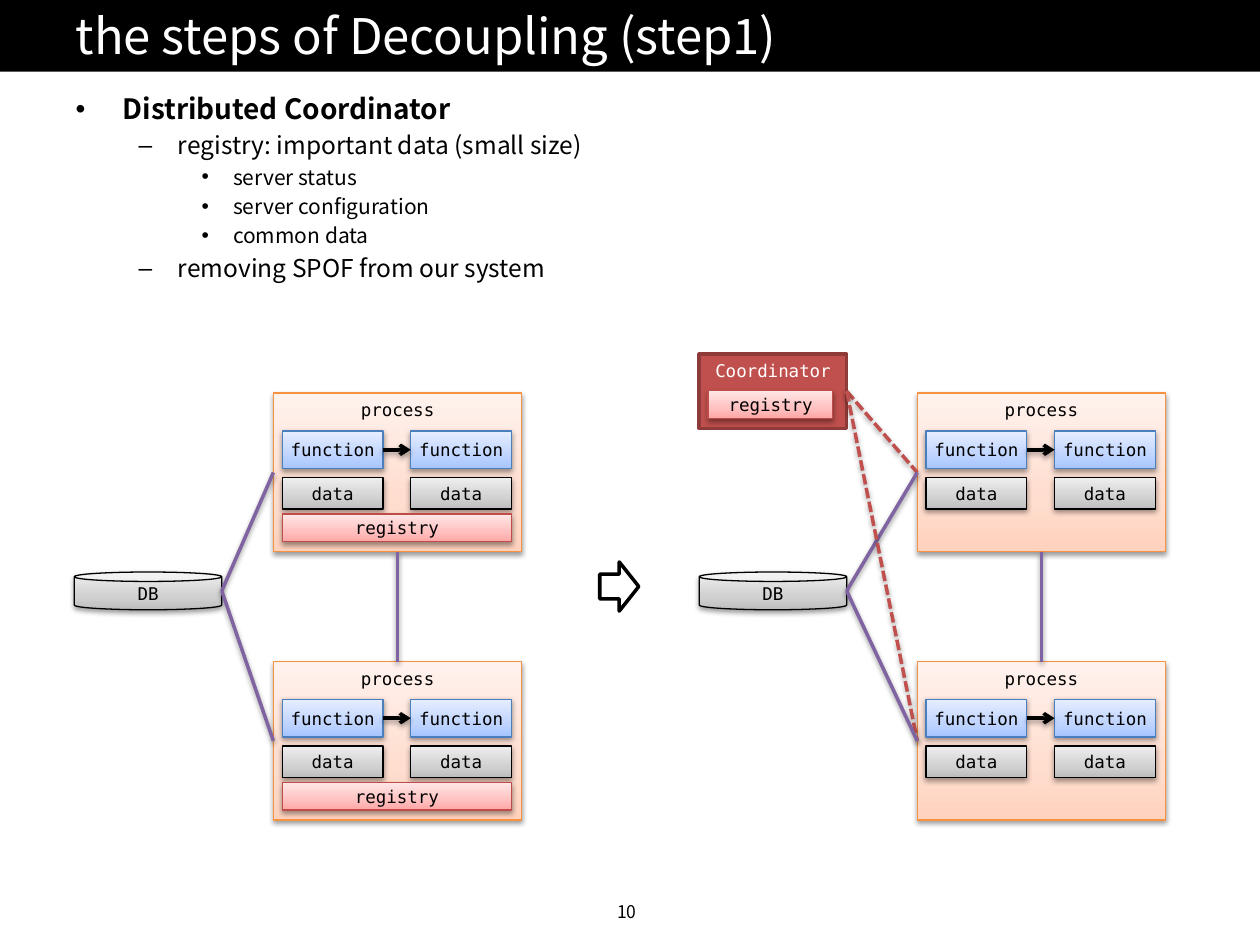
import copy

import lxml.etree
import pptx
import pptx.dml.color
import pptx.enum.dml
import pptx.enum.shapes
import pptx.enum.text
import pptx.oxml.ns
import pptx.util

inch = pptx.util.Inches
point = pptx.util.Pt
qname = pptx.oxml.ns.qn
hex_color = pptx.dml.color.RGBColor.from_string
preset = pptx.enum.shapes.MSO_SHAPE
anchor = pptx.enum.text.MSO_ANCHOR
align = pptx.enum.text.PP_ALIGN
SANS = "Noto Sans CJK KR"
MONO = "DejaVu Sans Mono"
STYLES = {
    "process": (["FFD2BD", "FFDED0", "FFF2ED"], "F69240", 0.75, "000000"),
    "function": (["A4C4FF", "BFD4FF", "E6EEFF"], "4B7EBC", 0.75, "000000"),
    "data": (["BDBDBD", "D1D1D1", "EEEEEE"], "000000", 0.75, "000000"),
    "registry": (["FFA6A5", "FFC0BF", "FFE7E7"], "BF4C48", 0.75, "000000"),
    "coordinator": (["C0504D"], "8E3B39", 2, "FFFFFF"),
    "step": (["FFFFFF"], "000000", 2, "000000"),
}
SHADOW = lxml.etree.fromstring(
    '<a:outerShdw xmlns:a="http://schemas.openxmlformats.org/drawingml/2006/main" '
    'blurRad="39370" dist="20320" dir="5400000" rotWithShape="0">'
    '<a:srgbClr val="000000"><a:alpha val="38000"/></a:srgbClr></a:outerShdw>'
)

deck = pptx.Presentation()
deck.slide_width, deck.slide_height = inch(10), inch(7.5)
page = deck.slides.add_slide(deck.slide_layouts[1])


def draw_box(style, label, left, top, width, height, outline=preset.RECTANGLE):
    fills, line_color, line_width, text_color = STYLES[style]
    box = page.shapes.add_shape(outline, inch(left), inch(top), inch(width), inch(height))
    box.line.color.rgb = hex_color(line_color)
    box.line.width = point(line_width)
    box.shadow.inherit = False
    if len(fills) == 1:
        box.fill.solid()
        box.fill.fore_color.rgb = hex_color(fills[0])
    else:
        box.fill.gradient()
        box.fill.gradient_angle = 90
        stops = box._element.spPr.find(".//" + qname("a:gsLst"))
        stops.append(copy.deepcopy(stops[0]))
        for stop, position, color in zip(box.fill.gradient_stops, (0, 0.35, 1), fills):
            stop.position = position
            stop.color.rgb = hex_color(color)
        box._element.spPr.find(qname("a:effectLst")).append(copy.deepcopy(SHADOW))
    if label:
        at_top = style in ("process", "coordinator")
        box.text_frame.word_wrap = False
        box.text_frame.vertical_anchor = anchor.TOP if at_top else anchor.MIDDLE
        para = box.text_frame.paragraphs[0]
        para.alignment = align.CENTER
        span = para.add_run()
        span.text = label
        for name, value in {"size": point(10), "name": MONO}.items():
            setattr(span.font, name, value)
        span.font.color.rgb = hex_color(text_color)
    return box


def draw_link(start, start_side, end, end_side, color, dashed=False, arrow=False):
    right, middle = start.left + start.width, start.top + start.height // 2
    link = page.shapes.add_connector(
        pptx.enum.shapes.MSO_CONNECTOR.STRAIGHT, right, middle, end.left, end.top
    )
    if start.auto_shape_type == preset.RECTANGLE:
        link.begin_connect(start, start_side)
    link.end_connect(end, end_side)
    link.line.color.rgb = hex_color(color)
    link.line.width = point(2)
    if dashed:
        link.line.dash_style = pptx.enum.dml.MSO_LINE.SQUARE_DOT
        link.line._ln.find(qname("a:prstDash")).set("val", "sysDash")
    if arrow:
        lxml.etree.SubElement(link.line._ln, qname("a:tailEnd"), type="arrow")
    effects = lxml.etree.SubElement(link._element.spPr, qname("a:effectLst"))
    effects.append(copy.deepcopy(SHADOW))


bar = page.shapes.add_shape(preset.RECTANGLE, 0, inch(-0.03), inch(10), inch(0.6))
bar.shadow.inherit = False
bar.fill.solid()
bar.fill.fore_color.rgb = hex_color("000000")
bar.line.fill.background()
page.shapes._spTree.insert(2, bar._element)

title, body = page.placeholders
number = page.shapes.add_textbox(0, 0, 0, 0)
bullets = [
    ("Distributed Coordinator", 0, 16, "000000"),
    ("registry: important data (small size)", 1, 14, "000000"),
    ("server status", 2, 12, "000000"),
    ("server configuration", 2, 12, "000000"),
    ("common data", 2, 12, "000000"),
    ("removing SPOF from our system", 1, 14, "000000"),
]
for holder, area, lines in (
    (title, (0.5, -0.03, 9.5, 0.62), [("the steps of Decoupling (step1)", 0, 28, "FFFFFF")]),
    (body, (0.5, 0.68, 9, 1.89), bullets),
    (number, (4.8, 7.1, 0.41, 0.27), [("10", 0, 10, "000000")]),
):
    for name, value in zip(("left", "top", "width", "height"), area):
        setattr(holder, name, inch(value))
    frame = holder.text_frame
    frame.auto_size = pptx.enum.text.MSO_AUTO_SIZE.NONE
    frame.word_wrap = holder is not number
    for index, (text, level, size, color) in enumerate(lines):
        para = frame.add_paragraph() if index else frame.paragraphs[0]
        para.level = level
        para.alignment = align.LEFT
        span = para.add_run()
        span.text = text
        for name, value in {"size": point(size), "name": SANS, "bold": size == 16}.items():
            setattr(span.font, name, value)
        span.font.color.rgb = hex_color(color)
title.text_frame.vertical_anchor = anchor.MIDDLE

coordinator = draw_box("coordinator", "Coordinator", 5.55, 2.81, 1.17, 0.59)
draw_box("registry", "registry", 5.62, 3.1, 0.99, 0.22)
draw_box("step", "", 4.76, 4.46, 0.31, 0.39, preset.RIGHT_ARROW)

for database_left, process_left, distributed in ((0.59, 2.17, False), (5.55, 7.28, True)):
    database = draw_box("data", "DB", database_left, 4.54, 1.17, 0.3, preset.CAN)
    processes = []
    for top in (3.12, 5.25):
        process = draw_box("process", "process", process_left, top, 1.97, 1.26)
        functions = []
        for left in (process_left + 0.07, process_left + 1.09):
            functions.append(draw_box("function", "function", left, top + 0.3, 0.8, 0.3))
            draw_box("data", "data", left, top + 0.67, 0.8, 0.25)
        draw_link(functions[0], 3, functions[1], 1, "000000", arrow=True)
        if distributed:
            draw_link(coordinator, 3, process, 1, "C0504D", dashed=True)
        else:
            draw_box("registry", "registry", process_left + 0.07, top + 0.96, 1.82, 0.22)
        draw_link(database, 3, process, 1, "8064A2")
        processes.append(process)
    draw_link(processes[1], 0, processes[0], 2, "8064A2")

deck.save("out.pptx")
